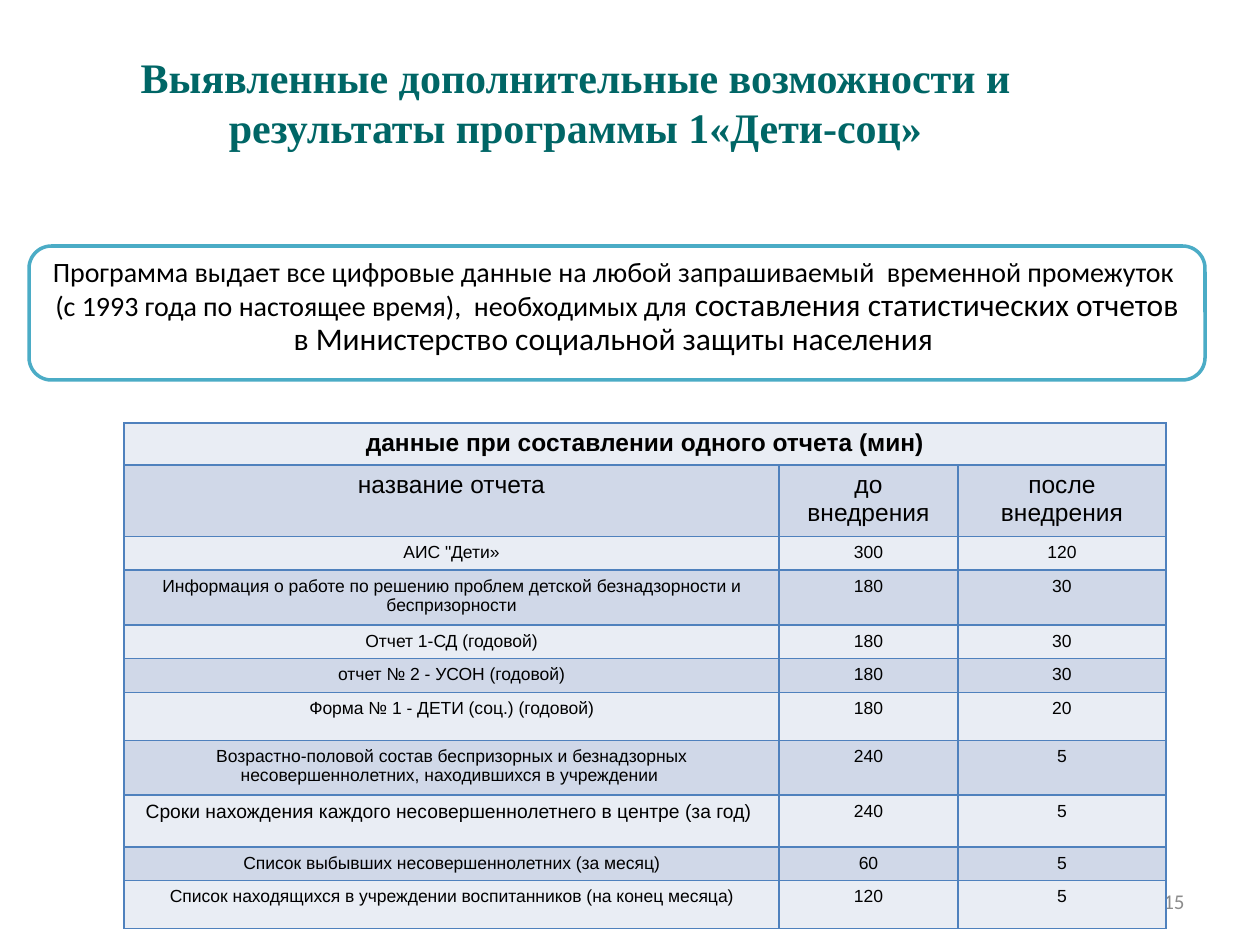
"""Build the slide on report preparation times before and after the programme."""
from dataclasses import dataclass

from lxml.etree import SubElement
from pptx import Presentation
from pptx.dml.color import RGBColor
from pptx.enum.shapes import MSO_SHAPE
from pptx.enum.text import MSO_ANCHOR, PP_ALIGN
from pptx.oxml.ns import qn
from pptx.util import Emu, Pt

TITLE = "Выявленные дополнительные возможности и результаты программы 1«Дети-соц»"
SUMMARY = [
    ("Программа выдает все цифровые данные на любой запрашиваемый  временной промежуток  "
     "(с 1993 года по настоящее время),  необходимых для", 16),
    (" составления статистических отчетов в Министерство социальной защиты населения ", 18),
]
PAGE_NUMBER = "15"
TABLE_TITLE = "данные при составлении одного отчета (мин)"
HEADINGS = ("название отчета", "до внедрения", "после внедрения")
LONG_STAY = "Сроки нахождения каждого несовершеннолетнего в центре (за год) "
REPORTS = [
    ("АИС \"Дети»", 300, 120, 29),
    ("Информация о работе по решению проблем детской безнадзорности и беспризорности", 180, 30, 48),
    ("Отчет 1-СД (годовой)", 180, 30, 29),
    ("отчет № 2 - УСОН (годовой)", 180, 30, 29),
    ("Форма № 1 - ДЕТИ (соц.) (годовой)", 180, 20, 48),
    ("Возрастно-половой состав беспризорных и безнадзорных несовершеннолетних, "
     "находившихся в учреждении ", 240, 5, 48),
    (LONG_STAY, 240, 5, 52),
    ("Список выбывших несовершеннолетних (за месяц)", 60, 5, 29),
    ("Список находящихся в учреждении воспитанников (на конец месяца)", 120, 5, 48),
]
COLUMN_WIDTHS = (655, 179, 208)
HEADING_HEIGHT = 37
SLIDE_SIZE = (1260, 945)
TITLE_BOX = (94, 45, 963, 115)
SUMMARY_BOX = (29, 246, 1176, 134)
TABLE_ORIGIN = (124, 423)
NUMBER_BOX = (903, 876, 294, 50)


@dataclass(frozen=True)
class Theme:
    """Colours, fonts and type sizes."""
    title: str = "006666"
    text: str = "000000"
    number: str = "8C8C8C"
    panel: str = "FFFFFF"
    panel_line: str = "4BACC6"
    border: str = "4F81BD"
    bands: tuple = ("E9EDF4", "D0D8E8")
    title_font: str = "Times New Roman"
    body_font: str = "Calibri"
    table_font: str = "Arial"
    title_size: int = 24
    number_size: int = 12
    heading_size: int = 14
    cell_size: int = 10
    long_stay_size: int = 11


THEME = Theme()


def px(length):
    return Emu(round(length * 914400 / 126))


def style(run, font, size, color, bold=False):
    run.font.name = font
    run.font.size = Pt(size)
    run.font.bold = bold
    run.font.color.rgb = RGBColor.from_string(color)


def add_text(slide, box, text, alignment, anchor, **font):
    frame = slide.shapes.add_textbox(*map(px, box)).text_frame
    frame.word_wrap = True
    frame.vertical_anchor = anchor
    frame.text = text
    paragraph = frame.paragraphs[0]
    paragraph.alignment = alignment
    style(paragraph.runs[0], **font)


def add_summary(slide):
    shape = slide.shapes.add_shape(MSO_SHAPE.ROUNDED_RECTANGLE, *map(px, SUMMARY_BOX))
    shape.shadow.inherit = False
    shape.fill.solid()
    shape.fill.fore_color.rgb = RGBColor.from_string(THEME.panel)
    shape.line.color.rgb = RGBColor.from_string(THEME.panel_line)
    shape.line.width = Pt(2)
    frame = shape.text_frame
    frame.word_wrap = True
    frame.vertical_anchor = MSO_ANCHOR.TOP
    paragraph = frame.paragraphs[0]
    paragraph.alignment = PP_ALIGN.CENTER
    paragraph.line_spacing = 0.9
    for text, size in SUMMARY:
        run = paragraph.add_run()
        run.text = text
        style(run, THEME.body_font, size, THEME.text)


def add_borders(cell):
    properties = cell._tc.get_or_add_tcPr()
    for side in ("a:lnL", "a:lnR", "a:lnT", "a:lnB"):
        line = SubElement(properties, qn(side), w=str(Pt(1)))
        fill = SubElement(line, qn("a:solidFill"))
        SubElement(fill, qn("a:srgbClr"), val=THEME.border)


def fill_cell(cell, text, size, band, bold):
    add_borders(cell)
    cell.fill.solid()
    cell.fill.fore_color.rgb = RGBColor.from_string(band)
    cell.text = text
    paragraph = cell.text_frame.paragraphs[0]
    paragraph.alignment = PP_ALIGN.CENTER
    for run in paragraph.runs:
        style(run, THEME.table_font, size, THEME.text, bold)


def add_report_table(slide):
    rows = [(TABLE_TITLE, "", ""), HEADINGS] + [report[:3] for report in REPORTS]
    heights = [HEADING_HEIGHT] * 2 + [report[3] for report in REPORTS]
    size = (sum(COLUMN_WIDTHS), sum(heights))
    table = slide.shapes.add_table(
        len(rows), len(COLUMN_WIDTHS), *map(px, TABLE_ORIGIN + size)).table
    table.first_row = table.horz_banding = False
    for column, width in zip(table.columns, COLUMN_WIDTHS):
        column.width = px(width)
    for row, height in zip(table.rows, heights):
        row.height = px(height)
    table.cell(0, 0).merge(table.cell(0, len(COLUMN_WIDTHS) - 1))
    for row_index, values in enumerate(rows):
        for column_index, value in enumerate(values):
            size = THEME.heading_size if row_index < 2 else THEME.cell_size
            if value == LONG_STAY:
                size = THEME.long_stay_size
            fill_cell(table.cell(row_index, column_index), str(value), size,
                      THEME.bands[row_index % 2], row_index == 0)


def main():
    presentation = Presentation()
    presentation.slide_width, presentation.slide_height = map(px, SLIDE_SIZE)
    slide = presentation.slides.add_slide(presentation.slide_layouts[6])
    add_text(slide, NUMBER_BOX, PAGE_NUMBER, PP_ALIGN.RIGHT, MSO_ANCHOR.MIDDLE,
             font=THEME.body_font, size=THEME.number_size, color=THEME.number)
    add_summary(slide)
    add_report_table(slide)
    add_text(slide, TITLE_BOX, TITLE, PP_ALIGN.CENTER, MSO_ANCHOR.TOP,
             font=THEME.title_font, size=THEME.title_size, color=THEME.title, bold=True)
    presentation.save("out.pptx")


if __name__ == "__main__":
    main()
